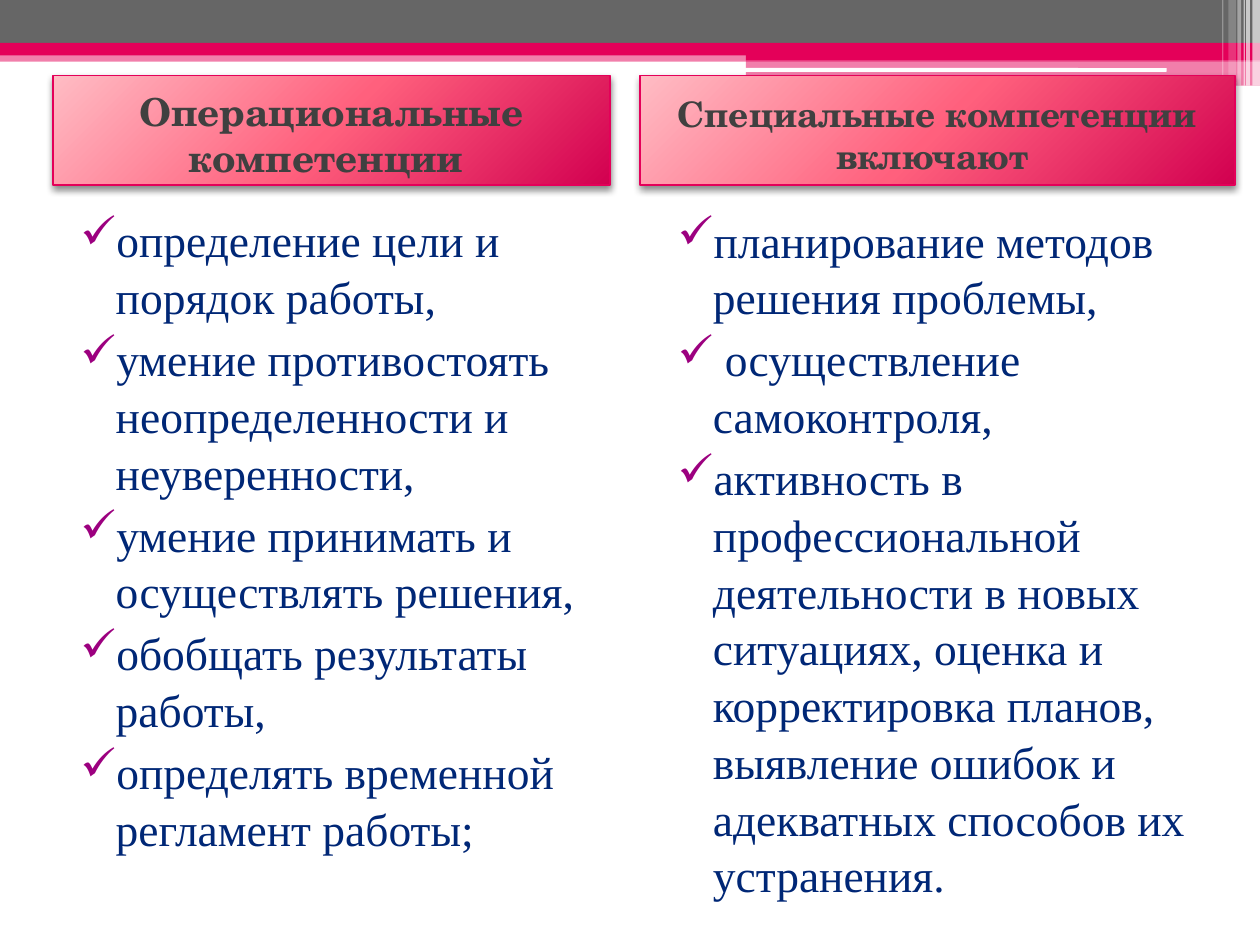
from lxml import etree
from pptx import Presentation
from pptx.dml.color import RGBColor
from pptx.enum.shapes import MSO_SHAPE
from pptx.enum.text import MSO_ANCHOR, PP_ALIGN
from pptx.oxml import parse_xml
from pptx.oxml.ns import nsdecls, qn
from pptx.util import Inches, Pt

RECT = MSO_SHAPE.RECTANGLE
ROUND = MSO_SHAPE.ROUNDED_RECTANGLE
CENTER, LEFT = PP_ALIGN.CENTER, PP_ALIGN.LEFT
MIDDLE = MSO_ANCHOR.MIDDLE

PINK = RGBColor(0xE4, 0x00, 0x59)
GRAY = RGBColor(0x66, 0x66, 0x66)
WHITE = RGBColor(0xFF, 0xFF, 0xFF)
DARK = RGBColor(0x40, 0x40, 0x40)
NAVY = RGBColor(0x00, 0x27, 0x76)
PURPLE = RGBColor(0x9C, 0x00, 0x7F)
HEADER_STOPS = (
    (0, RGBColor(0xFF, 0xBC, 0xC4)),
    (50, RGBColor(0xFF, 0x60, 0x7D)),
    (100, RGBColor(0xD2, 0x00, 0x50)),
)

HEAD_FONT = "TeX Gyre Schola"
BODY_FONT = "Times New Roman"
COLS, ROWS = 100, 75

BANDS = (
    (0, 4, 100, 0.9, PINK, 50),
    (0, 0, 100, 3.4, GRAY, 100),
    (0, 3.4, 100, 1, PINK, 100),
    (59.2, 3.9, 40.8, 0.9, PINK, 100),
    (59.2, 4.8, 40.8, 2, PINK, 50),
)
RULES = ((59.1, 5.4, 33.5, 0.3), (80.6, 6.4, 17.5, 0.4))
STRIPES = (
    (99.4, 0.6, 6.8, 65),
    (98.9, 0.3, 6.8, 65),
    (98.7, 0.1, 6.8, 60),
    (98.2, 0.3, 6.8, 40),
    (97.5, 0.6, 6.4, 20),
    (97, 0.1, 6.4, 30),
)
HEADERS = (
    (4.2, 44.2, "Операциональные компетенции ", 22),
    (50.8, 47.2, "Специальные компетенции включают ", 20),
)
LISTS = (
    (4.2, 54.3, (
        "определение цели и порядок работы,",
        "умение противостоять неопределенности и неуверенности,",
        "умение принимать и осуществлять решения,",
        "обобщать результаты работы,",
        "определять временной регламент работы;",
    )),
    (51.6, 55.1, (
        "планирование методов решения проблемы,",
        " осуществление самоконтроля,",
        "активность в профессиональной деятельности в новых ситуациях, "
        "оценка и корректировка планов, выявление ошибок и адекватных "
        "способов их устранения.",
    )),
)


def write(p, text, *, font, size, color, bold=False, align=LEFT):
    """Put one formatted run into a paragraph."""
    p.alignment = align
    p.space_before = Pt(3)
    r = p.add_run()
    r.text = text
    r.font.name, r.font.size, r.font.bold = font, Pt(size), bold
    r.font.color.rgb = color


class Deck:
    """Slide style and the current slide."""

    def __init__(self):
        """Start a presentation with one empty slide."""
        self.prs = Presentation()
        self.prs.slide_width, self.prs.slide_height = Inches(10), Inches(7.5)
        self.s = self.prs.slides.add_slide(self.prs.slide_layouts[6])

    def place(self, col, row, cols, rows):
        """Turn grid cells into slide lengths."""
        x, y = self.prs.slide_width / COLS, self.prs.slide_height / ROWS
        return int(col * x), int(row * y), int(cols * x), int(rows * y)

    def block(self, cell, color, alpha=100, kind=RECT):
        """Add a plain filled shape."""
        sp = self.s.shapes.add_shape(kind, *self.place(*cell))
        sp.shadow.inherit = False
        sp.line.fill.background()
        sp.fill.solid()
        sp.fill.fore_color.rgb = color
        if alpha < 100:
            clr = sp.fill._xPr.find(qn("a:solidFill"))[0]
            etree.SubElement(clr, qn("a:alpha"), val=str(alpha * 1000))
        return sp

    def header(self, cell, text, size):
        """Add a gradient heading box with a soft shadow."""
        sp = self.block(cell, PINK)
        sp.line.color.rgb = PINK
        sp.line.width = Pt(1)
        spPr = sp._element.spPr
        stops = "".join(
            f'<a:gs pos="{pos * 1000}"><a:srgbClr val="{color}"/></a:gs>'
            for pos, color in HEADER_STOPS)
        spPr.replace(spPr.find(qn("a:solidFill")), parse_xml(
            f'<a:gradFill {nsdecls("a")} rotWithShape="1"><a:gsLst>{stops}'
            '</a:gsLst><a:lin ang="2700000" scaled="1"/></a:gradFill>'))
        spPr.find(qn("a:effectLst")).append(parse_xml(
            f'<a:outerShdw {nsdecls("a")} blurRad="{Pt(4)}" dist="{Pt(2)}" '
            'dir="5400000" rotWithShape="0"><a:srgbClr val="000000">'
            '<a:alpha val="45000"/></a:srgbClr></a:outerShdw>'))
        tf = sp.text_frame
        tf.word_wrap, tf.vertical_anchor = True, MIDDLE
        tf.margin_top, tf.margin_bottom = Inches(0.08), Inches(0.02)
        write(tf.paragraphs[0], text, font=HEAD_FONT, size=size, color=DARK,
              bold=True, align=CENTER)

    def checklist(self, cell, items):
        """Add a text box of check-marked paragraphs."""
        tf = self.s.shapes.add_textbox(*self.place(*cell)).text_frame
        tf.word_wrap = True
        for i, item in enumerate(items):
            p = tf.add_paragraph() if i else tf.paragraphs[0]
            write(p, item, font=BODY_FONT, size=26, color=NAVY)
            p.line_spacing = 1.04
            pPr = p._p.get_or_add_pPr()
            pPr.set("marL", str(Inches(0.4)))
            pPr.set("indent", str(Inches(-0.28)))
            clr = etree.SubElement(pPr, qn("a:buClr"))
            etree.SubElement(clr, qn("a:srgbClr"), val=str(PURPLE))
            etree.SubElement(pPr, qn("a:buChar"), char="✓")


def main():
    """Build and save the slide."""
    deck = Deck()
    for *cell, color, alpha in BANDS:
        deck.block(cell, color, alpha)
    for cell in RULES:
        deck.block(cell, WHITE, kind=ROUND)
    for col, cols, rows, alpha in STRIPES:
        deck.block((col, 0, cols, rows), WHITE, alpha)
    for col, cols, text, size in HEADERS:
        deck.header((col, 6, cols, 8.7), text, size)
    for col, rows, items in LISTS:
        deck.checklist((col, 16.2, 44.2, rows), items)
    deck.prs.save("out.pptx")


if __name__ == "__main__":
    main()
